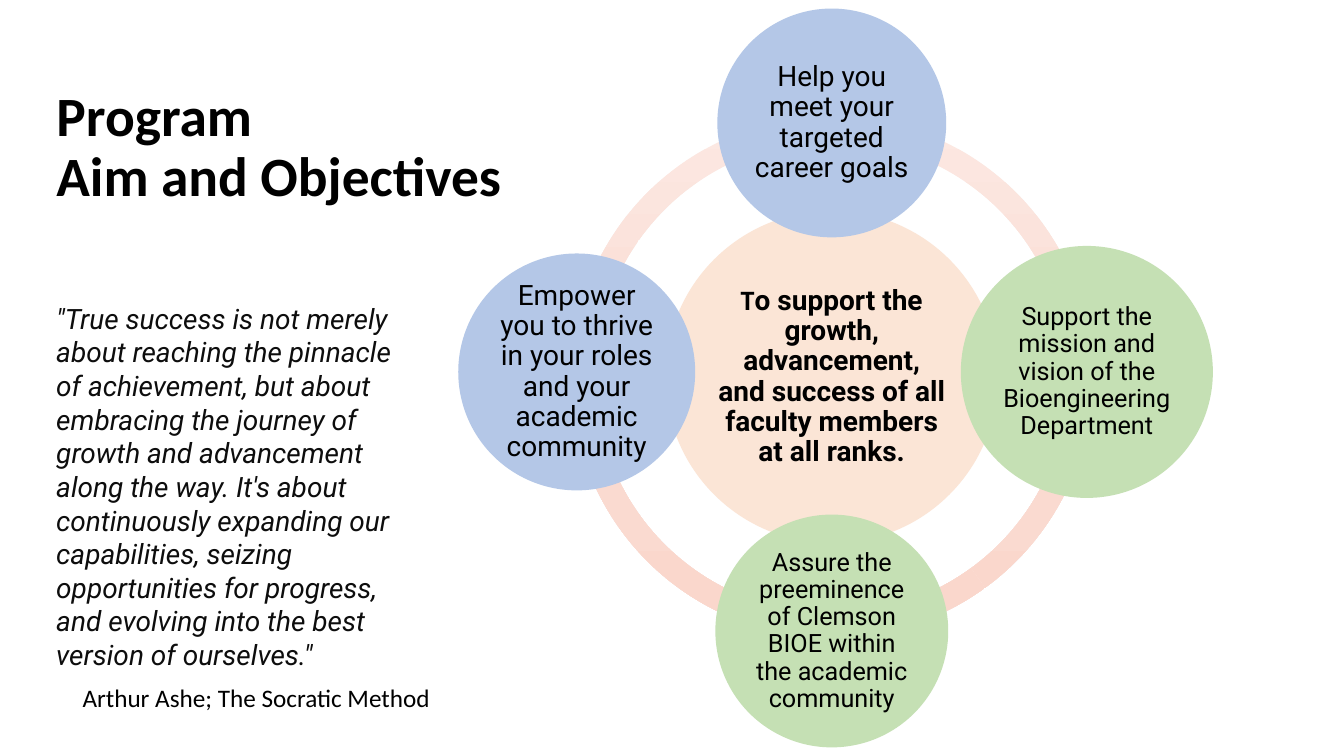
from copy import deepcopy

from pptx import Presentation
from pptx.dml.color import RGBColor
from pptx.enum.shapes import MSO_SHAPE
from pptx.enum.text import MSO_ANCHOR, PP_ALIGN
from pptx.oxml.ns import qn
from pptx.util import Inches, Pt

ELLIPSE, BLOCK_ARC = MSO_SHAPE.OVAL, MSO_SHAPE.BLOCK_ARC
MIDDLE, TOP = MSO_ANCHOR.MIDDLE, MSO_ANCHOR.TOP
LEFT, CENTER = PP_ALIGN.LEFT, PP_ALIGN.CENTER

HEADING_FONT, BODY_FONT = "Calibri", "Roboto"
BLACK, INK = "000000", "0D0D0D"
PEACH, BLUE, GREEN = "FBE5D6", "B4C7E7", "C5E0B4"
RING_COLORS = ("FCE8E2", "FADCD3", "FAD7CC")


def rgb(value):
    return RGBColor.from_string(value)


class SlideBuilder:
    """Holds the page and draws its elements in one style."""

    def __init__(self, page):
        self.page = page

    def set_text(self, frame, text, size, font=BODY_FONT, color=BLACK, bold=False,
                 italic=False, align=LEFT, anchor=TOP, spacing=None, wrap=True):
        frame.word_wrap = wrap
        frame.vertical_anchor = anchor
        frame.text = text
        para = frame.paragraphs[0]
        para.alignment = align
        para.line_spacing = spacing
        para.font.name = font
        para.font.size = Pt(size)
        para.font.bold = bold
        para.font.italic = italic
        para.font.color.rgb = rgb(color)
        return para

    def title(self, text, left, top, width, height):
        box = self.page.shapes.title
        box.left, box.top = Inches(left), Inches(top)
        box.width, box.height = Inches(width), Inches(height)
        self.set_text(box.text_frame, text, 39.6, HEADING_FONT, bold=True,
                      anchor=MIDDLE, spacing=0.9)

    def text(self, text, left, top, width, height, size, **style):
        box = self.page.shapes.add_textbox(
            Inches(left), Inches(top), Inches(width), Inches(height))
        self.set_text(box.text_frame, text, size, **style)

    def round_shape(self, kind, center_x, center_y, diameter):
        shape = self.page.shapes.add_shape(
            kind, Inches(center_x - diameter / 2), Inches(center_y - diameter / 2),
            Inches(diameter), Inches(diameter))
        shape.shadow.inherit = False
        shape.line.fill.background()
        return shape

    def arc(self, center_x, center_y, diameter, start, end):
        arc = self.round_shape(BLOCK_ARC, center_x, center_y, diameter)
        # Angles are stored in 60000ths of a degree, adjustments in 100000ths
        arc.adjustments[0] = start * 0.6
        arc.adjustments[1] = end * 0.6
        arc.adjustments[2] = 0.046
        arc.fill.gradient()
        arc.fill.gradient_angle = 270
        # The default gradient has two stops: add one in between
        stop_list = arc.element.spPr.find(".//" + qn("a:gsLst"))
        stop_list.insert(1, deepcopy(stop_list[0]))
        stops = zip(arc.fill.gradient_stops, RING_COLORS, (0, 0.5, 1))
        for stop, color, position in stops:
            stop.color.rgb = rgb(color)
            stop.position = position

    def circle(self, text, center_x, center_y, diameter, fill, size, bold=False):
        circle = self.round_shape(ELLIPSE, center_x, center_y, diameter)
        circle.fill.solid()
        circle.fill.fore_color.rgb = rgb(fill)
        frame = circle.text_frame
        frame.margin_left = frame.margin_right = Inches(0.03)
        frame.margin_top = frame.margin_bottom = Inches(0.03)
        return self.set_text(frame, text, size, bold=bold, align=CENTER,
                             anchor=MIDDLE, spacing=0.9)


def main():
    deck = Presentation()
    deck.slide_width, deck.slide_height = Inches(13.33), Inches(7.5)
    slide = SlideBuilder(deck.slides.add_slide(deck.slide_layouts[5]))

    slide.title("Program\vAim and Objectives", 0.46, 0.75, 5, 1.45)

    # Ring of four arcs
    center_x, center_y = 8.25, 3.74
    ring_angles = (215.32, 54, 108.68, 162, 215.32)
    for start, end in zip(ring_angles, ring_angles[1:]):
        slide.arc(center_x, center_y, 5.17, start, end)

    # Aim in the middle
    aim = slide.circle("", center_x, center_y, 3.3, PEACH, 20, bold=True)
    initial = aim.add_run()
    initial.text = "T"
    initial.font.name = HEADING_FONT
    aim.add_run().text = ("o support the growth, advancement, and success of all "
                          "faculty members at all ranks.")

    # Objectives around it: text, offset from the centre, diameter, fill, size
    objectives = (
        ("Help you meet your targeted career goals", 0, -2.52, 2.27, BLUE, 20),
        ("Support the mission and vision of the Bioengineering Department",
         2.53, -0.05, 2.5, GREEN, 18),
        ("Assure the preeminence of Clemson BIOE within the academic community",
         0, 2.52, 2.31, GREEN, 18),
        ("Empower you to thrive in your roles and your academic community",
         -2.53, -0.05, 2.35, BLUE, 20),
    )
    for text, shift_x, shift_y, diameter, fill, size in objectives:
        slide.circle(text, center_x + shift_x, center_y + shift_y,
                     diameter, fill, size)

    # Quote and its author
    slide.text(
        "\"True success is not merely about reaching the pinnacle of achievement, "
        "but about embracing the journey of growth and advancement along the way. "
        "It's about continuously expanding our capabilities, seizing opportunities "
        "for progress, and evolving into the best version of ourselves.\"",
        0.46, 2.94, 3.77, 3.81, 20, color=INK, italic=True)
    slide.text("Arthur Ashe; The Socratic Method", 0.72, 6.72, 3.69, 0.4, 18,
               font=HEADING_FONT, wrap=False)

    deck.save("out.pptx")


if __name__ == "__main__":
    main()
